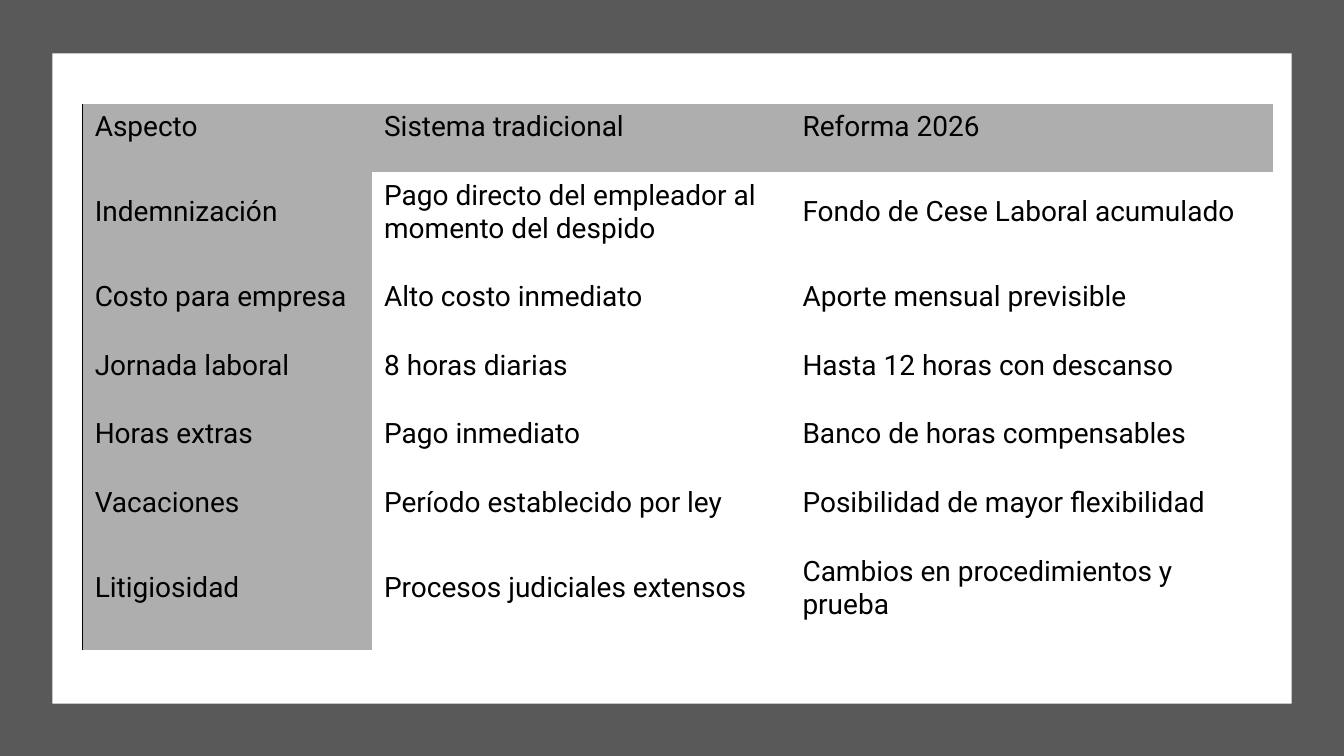
from lxml import etree
from pptx import Presentation, util as u
from pptx.dml.color import RGBColor
from pptx.enum import shapes, text
from pptx.oxml.ns import qn

PX = 9144
COLORS = {"frame": "595959", "panel": "FFFFFF", "header": "AEAEAE", "ink": "000000"}
FONT = {"name": "Roboto", "size": u.Pt(20), "bold": False}
CELL = {"margin_left": 12 * PX, "margin_top": 3 * PX, "margin_right": 17 * PX,
        "margin_bottom": 25 * PX, "vertical_anchor": text.MSO_ANCHOR.MIDDLE}
NO_GRID = "{2D5ABB26-0587-4C30-8999-92F81FD0307C}"

COLUMNS = [287, 415, 479]
ROW_HEIGHTS = [68, 101, 68, 68, 68, 68, 101]
COMPARISON = [
    ["Aspecto", "Sistema tradicional", "Reforma 2026"],
    ["Indemnización", "Pago directo del empleador al momento del despido",
     "Fondo de Cese Laboral acumulado"],
    ["Costo para empresa", "Alto costo inmediato", "Aporte mensual previsible"],
    ["Jornada laboral", "8 horas diarias", "Hasta 12 horas con descanso"],
    ["Horas extras", "Pago inmediato", "Banco de horas compensables"],
    ["Vacaciones", "Período establecido por ley", "Posibilidad de mayor flexibilidad"],
    ["Litigiosidad", "Procesos judiciales extensos", "Cambios en procedimientos y prueba"],
]


def apply(target, values):
    for name, value in values.items():
        setattr(target, name, value)


class Deck:
    """Holds the style and the current slide."""

    def __init__(self, width, height):
        self.prs = Presentation()
        apply(self.prs, {"slide_width": width * PX, "slide_height": height * PX})
        self.s = self.prs.slides.add_slide(self.prs.slide_layouts[6])

    def color(self, key):
        return RGBColor.from_string(COLORS[key])

    def paint(self, fill, key):
        fill.solid()
        fill.fore_color.rgb = self.color(key)

    def rect(self, box, key):
        sp = self.s.shapes.add_shape(shapes.MSO_SHAPE.RECTANGLE, *(n * PX for n in box))
        sp.shadow.inherit = False
        sp.line.fill.background()
        self.paint(sp.fill, key)

    def left_border(self, cell, key):
        ln = etree.Element(qn("a:lnL"), w=str(u.Pt(0.75)))
        fill = etree.SubElement(ln, qn("a:solidFill"))
        etree.SubElement(fill, qn("a:srgbClr"), val=COLORS[key])
        cell._tc.get_or_add_tcPr().insert(0, ln)

    def cell(self, cell, label, is_header):
        apply(cell, CELL)
        p = cell.text_frame.paragraphs[0]
        r = p.add_run()
        r.text = label
        apply(r.font, FONT)
        r.font.color.rgb = self.color("ink")
        if is_header:
            self.paint(cell.fill, "header")
        else:
            cell.fill.background()

    def table(self, left, top, columns, heights, rows):
        box = (left, top, sum(columns), sum(heights))
        frame = self.s.shapes.add_table(len(rows), len(columns), *(n * PX for n in box))
        table = frame.table
        apply(table, {"first_row": False, "horz_banding": False})
        table._tbl.tblPr.find(qn("a:tableStyleId")).text = NO_GRID
        for column, width in zip(table.columns, columns):
            column.width = width * PX
        for row, height in zip(table.rows, heights):
            row.height = height * PX
        for i, labels in enumerate(rows):
            for j, label in enumerate(labels):
                self.cell(table.cell(i, j), label, i == 0 or j == 0)
            self.left_border(table.cell(i, 0), "ink")


def main():
    deck = Deck(1333, 750)
    deck.rect((0, 0, 1333, 750), "frame")
    deck.rect((52, 53, 1229, 645), "panel")
    deck.table(82, 103, COLUMNS, ROW_HEIGHTS, COMPARISON)
    deck.prs.save("out.pptx")


if __name__ == "__main__":
    main()
